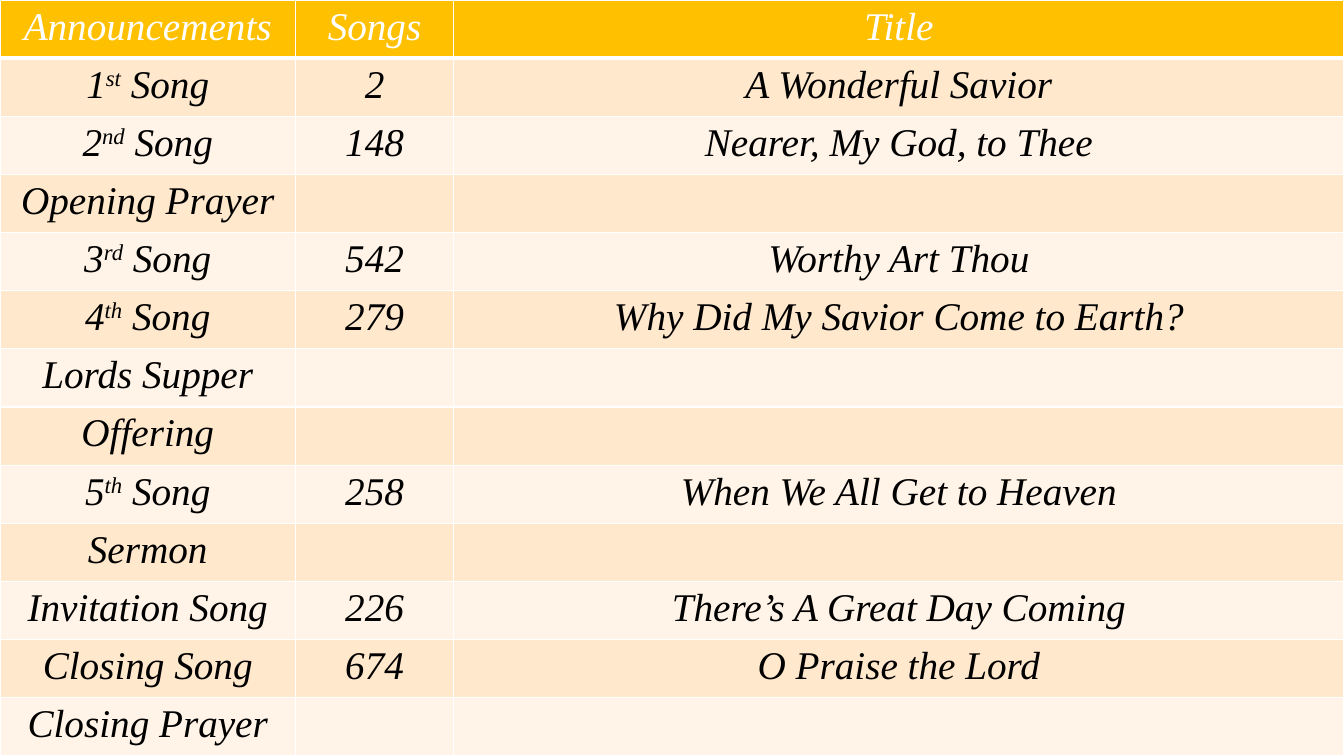
from lxml import etree
from pptx import Presentation
from pptx.dml.color import RGBColor
from pptx.enum.text import PP_ALIGN
from pptx.oxml.ns import qn
from pptx.util import Inches, Pt

CENTER = PP_ALIGN.CENTER

# Content: a tuple in the first column is (number, ordinal suffix, rest)
HEADER = ("Announcements", "Songs", "Title")
SERVICE = [
    (("1", "st", " Song"), "2", "A Wonderful Savior"),
    (("2", "nd", " Song"), "148", "Nearer, My God, to Thee"),
    ("Opening Prayer", "", ""),
    (("3", "rd", " Song"), "542", "Worthy Art Thou"),
    (("4", "th", " Song"), "279", "Why Did My Savior Come to Earth?"),
    ("Lords Supper", "", ""),
    ("Offering", "", ""),
    (("5", "th", " Song"), "258", "When We All Get to Heaven"),
    ("Sermon", "", ""),
    ("Invitation Song", "226", "There’s A Great Day Coming"),
    ("Closing Song", "674", "O Praise the Lord"),
    ("Closing Prayer", "", ""),
]

# Theme and layout
THEME = {
    "header_fill": "FFC000",
    "band_fills": ("FFE8CC", "FFF4E7"),
    "header_text": "FFFFFF",
    "body_text": "000000",
    "border": "FFFFFF",
    "border_width": 1,
    "header_rule_width": 3,
    "font": {"name": "Times New Roman", "size": Pt(28), "italic": True, "bold": False},
    "superscript": "30000",
}
SLIDE_WIDTH, SLIDE_HEIGHT = Inches(13.33), Inches(7.5)
COLUMN_WIDTHS = (2.93, 1.57, 8.83)


def add_borders(cell, bottom_width):
    properties = cell._tc.get_or_add_tcPr()
    for side in "LRTB":
        width = bottom_width if side == "B" else THEME["border_width"]
        line = etree.SubElement(properties, qn(f"a:ln{side}"), w=str(Pt(width)))
        fill = etree.SubElement(line, qn("a:solidFill"))
        etree.SubElement(fill, qn("a:srgbClr"), val=THEME["border"])


def write_cell(cell, content, text_color):
    paragraph = cell.text_frame.paragraphs[0]
    paragraph.alignment = CENTER
    pieces = content if isinstance(content, tuple) else (content,)
    for position, piece in enumerate(pieces):
        if not piece:
            continue
        run = paragraph.add_run()
        run.text = piece
        for name, value in THEME["font"].items():
            setattr(run.font, name, value)
        run.font.color.rgb = RGBColor.from_string(text_color)
        if position == 1:
            run._r.get_or_add_rPr().set("baseline", THEME["superscript"])


def main():
    presentation = Presentation()
    presentation.slide_width, presentation.slide_height = SLIDE_WIDTH, SLIDE_HEIGHT
    slide = presentation.slides.add_slide(presentation.slide_layouts[6])

    # Full-slide table with equal rows
    rows = [HEADER, *SERVICE]
    table = slide.shapes.add_table(
        len(rows), len(HEADER), 0, 0, SLIDE_WIDTH, SLIDE_HEIGHT
    ).table
    table.horz_banding = False
    for column, width in zip(table.columns, COLUMN_WIDTHS):
        column.width = Inches(width)
    for row in table.rows:
        row.height = SLIDE_HEIGHT // len(rows)

    # Header row, then alternating bands
    for row_index, contents in enumerate(rows):
        is_header = row_index == 0
        fill = THEME["header_fill"] if is_header else THEME["band_fills"][(row_index - 1) % 2]
        text_color = THEME["header_text" if is_header else "body_text"]
        bottom_width = THEME["header_rule_width" if is_header else "border_width"]
        for column_index, content in enumerate(contents):
            cell = table.cell(row_index, column_index)
            add_borders(cell, bottom_width)
            cell.fill.solid()
            cell.fill.fore_color.rgb = RGBColor.from_string(fill)
            write_cell(cell, content, text_color)

    presentation.save("out.pptx")


if __name__ == "__main__":
    main()
